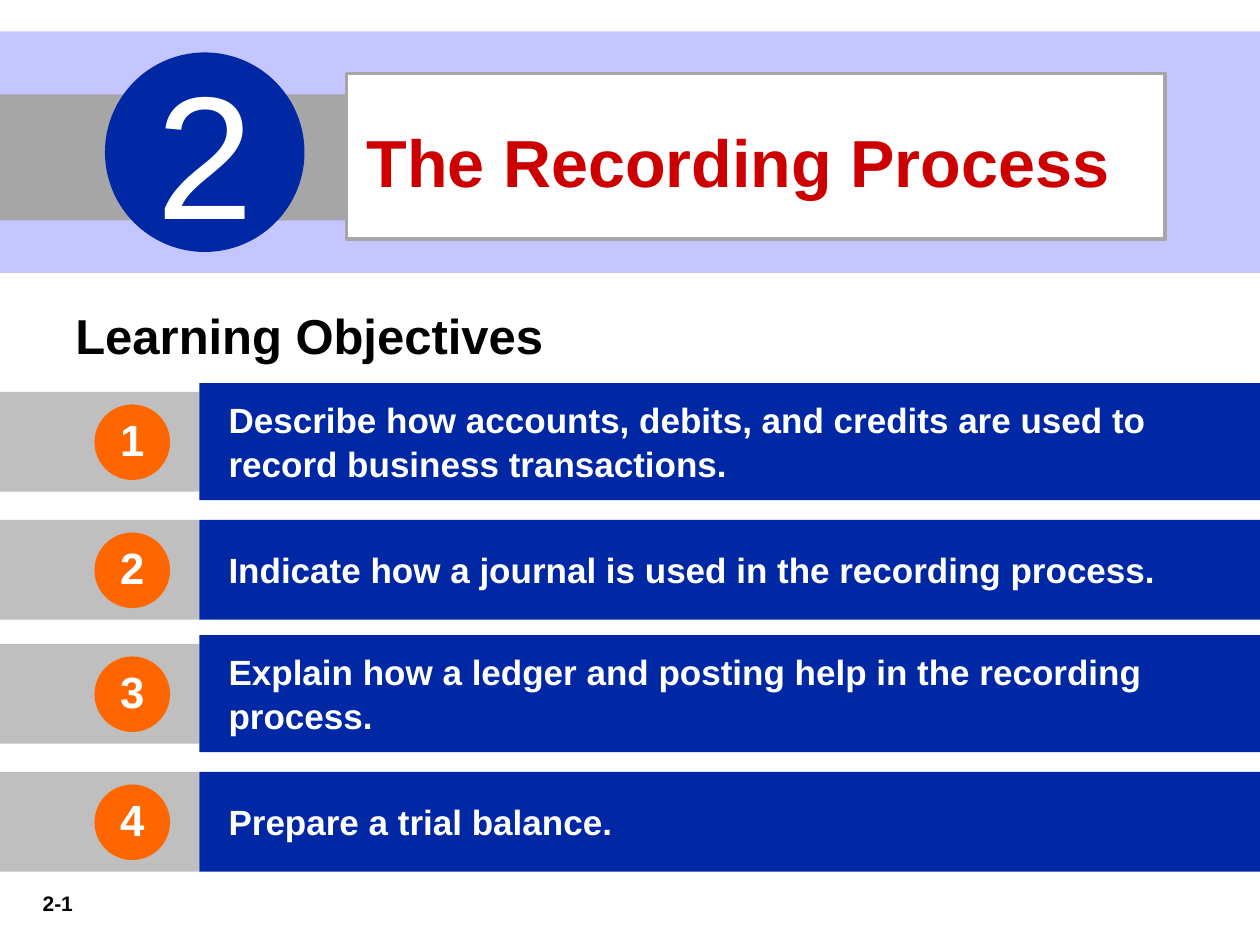
from pptx import Presentation
from pptx.dml.color import RGBColor
from pptx.enum import shapes, text
from pptx.util import Pt

NAVY, ORANGE, WHITE, BLACK = "0027A4", "FF6600", "FFFFFF", "000000"
LAVENDER, GRAY, SILVER, RED = "C5C5FF", "A6A6A6", "BFBFBF", "CC0000"
LEFT, CENTER = text.PP_ALIGN.LEFT, text.PP_ALIGN.CENTER


def color(value):
    return RGBColor.from_string(value)


class SlideBuilder:
    font_name = "Arial"

    def __init__(self, slide):
        self.slide = slide

    def set_text(self, shape, words, size, ink, bold=True, align=LEFT,
                 anchor=text.MSO_ANCHOR.MIDDLE, margins=(7.2, 3.6, 7.2, 3.6), line_spacing=1):
        frame = shape.text_frame
        frame.word_wrap = True
        frame.auto_size = text.MSO_AUTO_SIZE.NONE
        frame.vertical_anchor = anchor
        (frame.margin_left, frame.margin_top,
         frame.margin_right, frame.margin_bottom) = map(Pt, margins)
        paragraph = frame.paragraphs[0]
        paragraph.text = words
        paragraph.alignment = align
        paragraph.line_spacing = line_spacing
        paragraph.space_before = Pt(0)
        paragraph.font.name = self.font_name
        paragraph.font.size = Pt(size)
        paragraph.font.bold = bold
        paragraph.font.color.rgb = color(ink)

    def block(self, left, top, width, height, fill, kind=shapes.MSO_SHAPE.RECTANGLE):
        shape = self.slide.shapes.add_shape(kind, Pt(left), Pt(top), Pt(width), Pt(height))
        shape.shadow.inherit = False
        shape.fill.solid()
        shape.fill.fore_color.rgb = color(fill)
        shape.line.fill.background()
        return shape

    def badge(self, center_x, center_y, diameter, fill, number, size, bold=True):
        shape = self.block(center_x - diameter / 2, center_y - diameter / 2,
                           diameter, diameter, fill, shapes.MSO_SHAPE.OVAL)
        self.set_text(shape, number, size, WHITE, bold, CENTER, margins=(7.2, 0, 7.2, 3.6))

    def label(self, left, top, width, height, words, size, align=LEFT, top_margin=3.6):
        box = self.slide.shapes.add_textbox(Pt(left), Pt(top), Pt(width), Pt(height))
        self.set_text(box, words, size, BLACK, align=align, anchor=text.MSO_ANCHOR.TOP,
                      margins=(7.2, top_margin, 7.2, 3.6))

    def title(self, left, top, width, height, words):
        title = self.slide.shapes.title
        title.left, title.top, title.width, title.height = map(Pt, (left, top, width, height))
        title.fill.solid()
        title.fill.fore_color.rgb = color(WHITE)
        title.line.color.rgb = color(GRAY)
        title.line.width = Pt(2.25)
        self.set_text(title, words, 38, RED, margins=(11.5, 9.4, 7.2, 3.6))
        title.element.getparent().append(title.element)

    def objective(self, center_y, height, number, words):
        self.block(0, center_y - 28.5, 114, 57, SILVER)
        panel = self.block(114, center_y - height / 2, 606, height, NAVY)
        self.set_text(panel, words, 20, WHITE, margins=(16.6, 2.2, 7.2, 3.6), line_spacing=1.05)
        self.badge(75.6, center_y + 0.3, 43.2, ORANGE, str(number), 25)


def main():
    presentation = Presentation()
    presentation.slide_width, presentation.slide_height = Pt(720), Pt(540)
    builder = SlideBuilder(presentation.slides.add_slide(presentation.slide_layouts[5]))

    builder.block(0, 18, 720, 138, LAVENDER)
    builder.block(0, 54, 198, 72, GRAY)
    builder.title(198, 42, 468, 94.5, "The Recording Process")
    builder.badge(117, 87, 114, NAVY, "2", 100, bold=False)
    builder.label(36, 168, 348, 41, "Learning Objectives", 28, top_margin=6.4)

    objectives = [
        (252.4, 67, "Describe how accounts, debits, and credits are used to "
                    "record business transactions."),
        (325.6, 57, "Indicate how a journal is used in the recording process."),
        (396.4, 67, "Explain how a ledger and posting help in the recording process."),
        (469.6, 57, "Prepare a trial balance."),
    ]
    for number, (center_y, height, words) in enumerate(objectives, 1):
        builder.objective(center_y, height, number, words)

    builder.label(6, 504, 54, 21.6, "2-1", 12, CENTER, top_margin=4.8)
    presentation.save("out.pptx")


if __name__ == "__main__":
    main()
